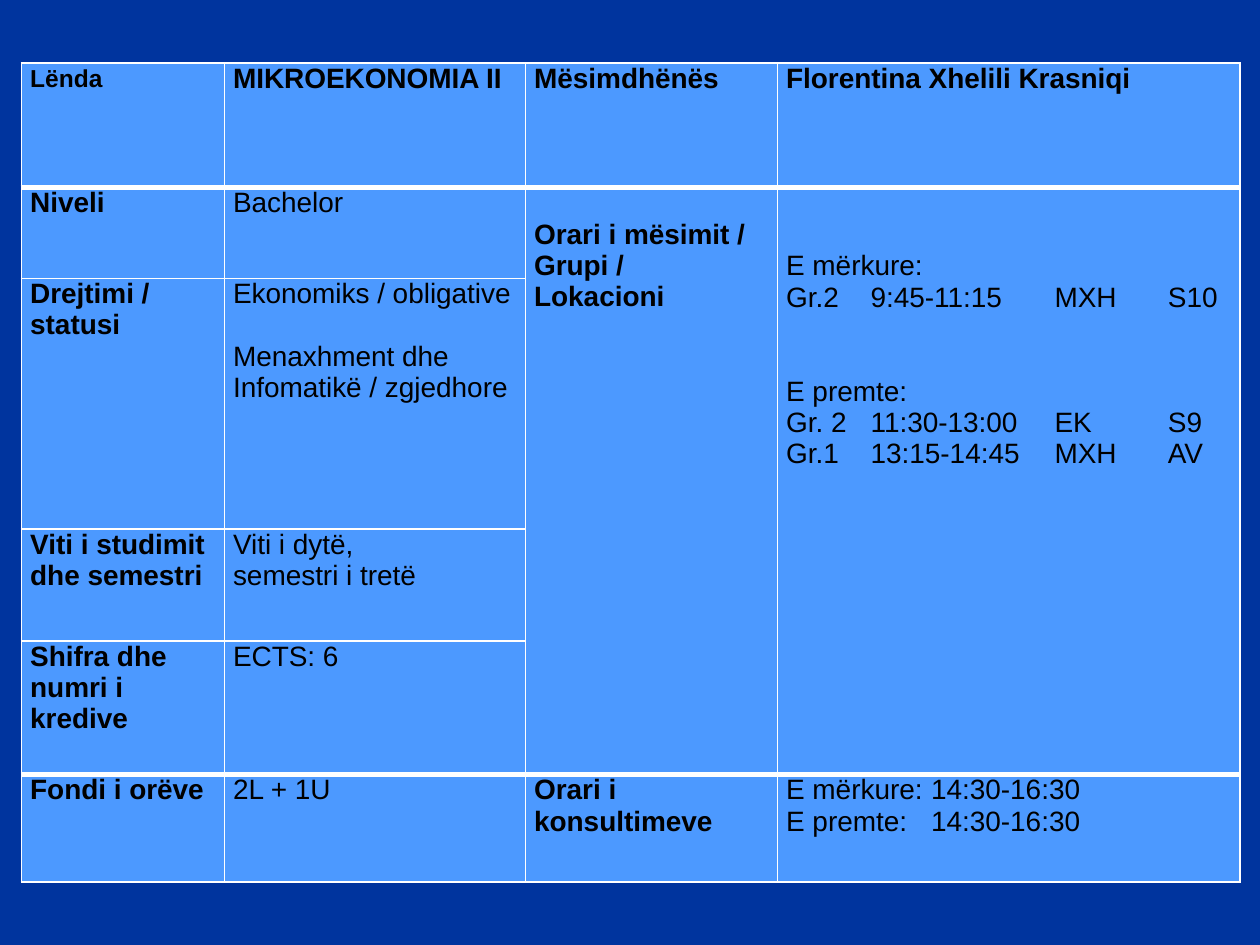
from dataclasses import dataclass, field

from lxml import etree
from pptx import Presentation
from pptx import util as u
from pptx.dml.color import RGBColor
from pptx.oxml import ns


@dataclass(frozen=True)
class Theme:
    font: str = "Arial"
    background: str = "00349E"
    cell: str = "4C99FF"
    ink: str = "000000"
    rule: str = "FFFFFF"
    body_pt: int = 16
    small_pt: int = 14
    line_pt: int = 18
    thin_pt: int = 1
    thick_pt: int = 3


@dataclass
class Entry:
    """One table cell: its lines, weight, and spacing."""
    lines: list
    bold: bool = False
    small: bool = False
    top: float = 0
    gaps: dict = field(default_factory=dict)   # line index -> free lines before it
    stops: tuple = ()                          # tab stops in inches


def label(*lines, **options):
    return Entry(list(lines), bold=True, **options)


def value(*lines, **options):
    return Entry(list(lines), **options)


class SlideBuilder:
    def __init__(self, slide, theme):
        self.slide = slide
        self.theme = theme

    def background(self):
        fill = self.slide.background.fill
        fill.solid()
        fill.fore_color.rgb = RGBColor.from_string(self.theme.background)

    def table(self, left, top, widths, heights):
        frame = self.slide.shapes.add_table(
            len(heights), len(widths), u.Inches(left), u.Inches(top),
            u.Inches(sum(widths)), u.Inches(sum(heights)))
        table = frame.table
        table.first_row = table.horz_banding = False
        for column, width in zip(table.columns, widths):
            column.width = u.Inches(width)
        for row, height in zip(table.rows, heights):
            row.height = u.Inches(height)
        return table

    def cell_style(self, cell, thick_sides):
        properties = cell._tc.get_or_add_tcPr()
        for side in "LRTB":
            points = self.theme.thick_pt if side in thick_sides else self.theme.thin_pt
            line = etree.SubElement(properties, ns.qn(f"a:ln{side}"), w=str(u.Pt(points)))
            paint = etree.SubElement(line, ns.qn("a:solidFill"))
            etree.SubElement(paint, ns.qn("a:srgbClr"), val=self.theme.rule)
        cell.fill.solid()
        cell.fill.fore_color.rgb = RGBColor.from_string(self.theme.cell)
        cell.margin_left = cell.margin_right = u.Inches(0.07)
        cell.margin_top = cell.margin_bottom = 0

    def cell_text(self, cell, entry):
        cell.margin_top = u.Inches(entry.top)
        frame = cell.text_frame
        frame.text = "\n".join(entry.lines)
        for index, paragraph in enumerate(frame.paragraphs):
            if index in entry.gaps:
                paragraph.space_before = u.Pt(entry.gaps[index] * self.theme.line_pt)
            if entry.stops:
                self.tab_stops(paragraph, entry.stops)
            for run in paragraph.runs:
                run.font.name = self.theme.font
                run.font.size = u.Pt(self.theme.small_pt if entry.small else self.theme.body_pt)
                run.font.bold = entry.bold
                run.font.color.rgb = RGBColor.from_string(self.theme.ink)

    def tab_stops(self, paragraph, stops):
        tabs = etree.SubElement(paragraph._p.get_or_add_pPr(), ns.qn("a:tabLst"))
        for stop in stops:
            etree.SubElement(tabs, ns.qn("a:tab"), pos=str(u.Inches(stop)), algn="l")


# Course details, keyed by (row, column)
COURSE = {
    (0, 0): label("Lënda", small=True, top=0.02),
    (0, 1): label("MIKROEKONOMIA II"),
    (0, 2): label("Mësimdhënës"),
    (0, 3): label("Florentina Xhelili Krasniqi"),
    (1, 0): label("Niveli"),
    (1, 1): value("Bachelor"),
    (1, 2): label("Orari i mësimit /", "Grupi /\vLokacioni", top=0.25),
    (1, 3): value(
        "E mërkure:",
        "Gr.2\t9:45-11:15\tMXH\tS10",
        "E premte:",
        "Gr. 2\t11:30-13:00\tEK\tS9",
        "Gr.1\t13:15-14:45\tMXH\tAV",
        top=0.5, gaps={2: 2}, stops=(0.67, 2.13, 3.03)),
    (2, 0): label("Drejtimi / statusi"),
    (2, 1): value("Ekonomiks / obligative",
                  "Menaxhment dhe Infomatikë / zgjedhore", gaps={1: 1}),
    (3, 0): label("Viti i studimit dhe semestri"),
    (3, 1): value("Viti i dytë,", "semestri i tretë"),
    (4, 0): label("Shifra dhe numri i kredive"),
    (4, 1): value("ECTS: 6"),
    (5, 0): label("Fondi i orëve"),
    (5, 1): value("2L + 1U"),
    (5, 2): label("Orari i konsultimeve"),
    (5, 3): value("E mërkure:\t14:30-16:30", "E premte:\t14:30-16:30", stops=(1.15,)),
}
COLUMN_WIDTHS = (1.61, 2.39, 2, 3.67)
ROW_HEIGHTS = (0.99, 0.72, 1.99, 0.89, 1.06, 0.85)
THICK_SIDES = {0: "B", 1: "T", 4: "B", 5: "T"}   # heavy rules by row


def main():
    deck = Presentation()
    deck.slide_width, deck.slide_height = u.Inches(10), u.Inches(7.5)
    builder = SlideBuilder(deck.slides.add_slide(deck.slide_layouts[6]), Theme())
    builder.background()

    # Grid with heavy rules under the header and above the last row
    course_table = builder.table(0.17, 0.5, COLUMN_WIDTHS, ROW_HEIGHTS)
    for row in range(len(ROW_HEIGHTS)):
        for column in range(len(COLUMN_WIDTHS)):
            builder.cell_style(course_table.cell(row, column), THICK_SIDES.get(row, ""))

    # The timetable spans the middle rows
    for column in (2, 3):
        course_table.cell(1, column).merge(course_table.cell(4, column))

    # Cell wording
    for (row, column), entry in COURSE.items():
        builder.cell_text(course_table.cell(row, column), entry)

    deck.save("out.pptx")


if __name__ == "__main__":
    main()
